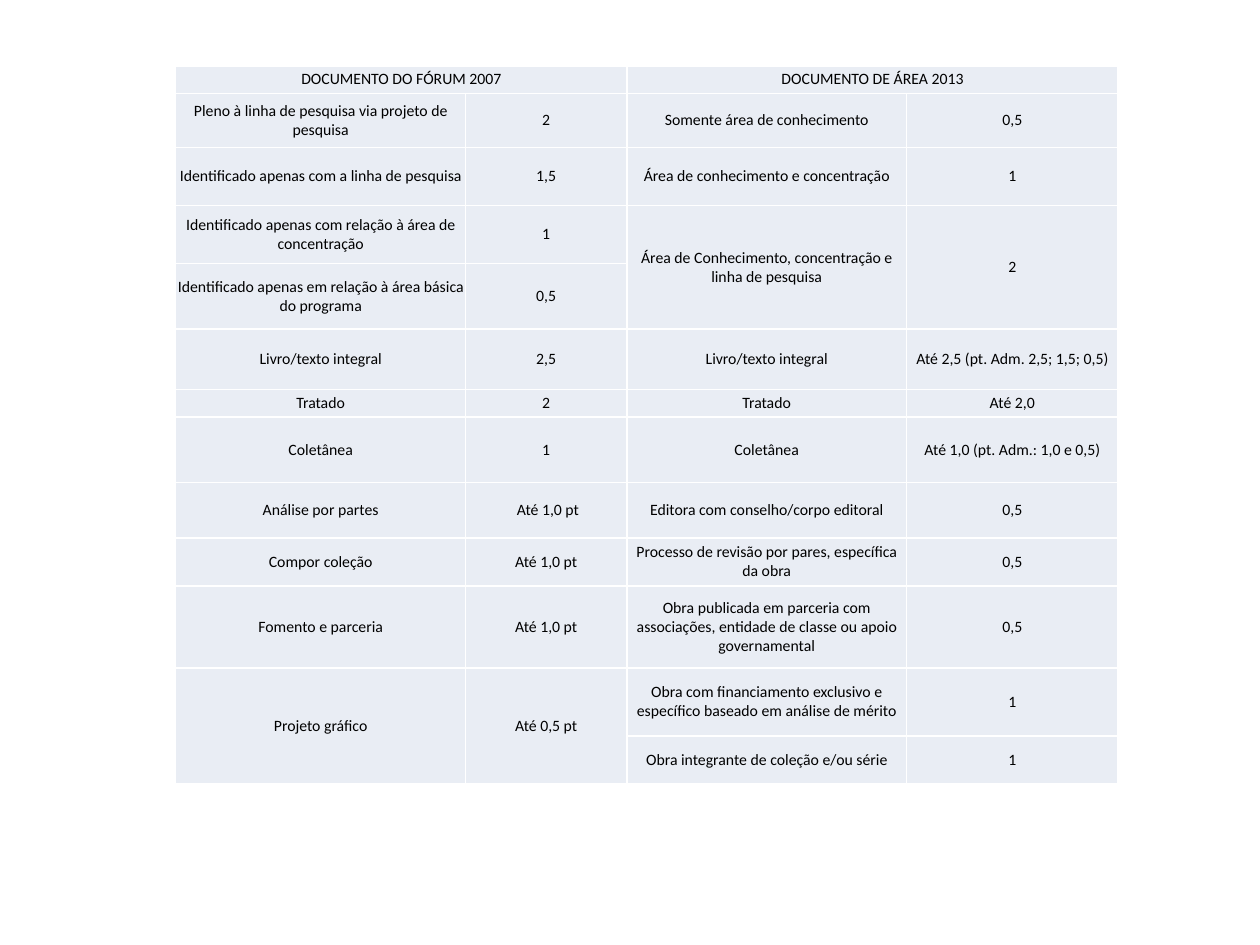
from lxml.etree import SubElement
from pptx import Presentation
from pptx.dml.color import RGBColor
from pptx.enum.text import MSO_ANCHOR, PP_ALIGN
from pptx.oxml.ns import qn
from pptx.util import Pt

COLORS = {"fill": "E9EDF4", "border": "FFFFFF", "text": "000000"}
COLUMN_WIDTHS = [165.6, 92.16, 159.84, 120.96]
ROWS = [
    (15.84, ["DOCUMENTO DO FÓRUM 2007", "", "DOCUMENTO DE ÁREA 2013", ""]),
    (30.96, ["Pleno à linha de pesquisa via projeto de pesquisa", "2",
             "Somente área de conhecimento", "0,5"]),
    (33.12, ["Identificado apenas com a linha de pesquisa", "1,5",
             "Área de conhecimento e concentração", "1"]),
    (33.12, ["Identificado apenas com relação à área de concentração", "1",
             "Área de Conhecimento, concentração e linha de pesquisa", "2"]),
    (37.44, ["Identificado apenas em relação à área básica do programa", "0,5", "", ""]),
    (34.56, ["Livro/texto integral", "2,5",
             "Livro/texto integral", "Até 2,5 (pt. Adm. 2,5; 1,5; 0,5)"]),
    (15.84, ["Tratado", "2", "Tratado", "Até 2,0"]),
    (37.44, ["Coletânea", "1", "Coletânea", "Até 1,0 (pt. Adm.: 1,0 e 0,5)"]),
    (31.68, ["Análise por partes", " Até 1,0 pt",
             "Editora com conselho/corpo editoral", "0,5"]),
    (27.36, ["Compor coleção", "Até 1,0 pt",
             "Processo de revisão por pares, específica da obra", "0,5"]),
    (46.8, ["Fomento e parceria", "Até 1,0 pt",
            "Obra publicada em parceria com associações, entidade de classe "
            "ou apoio governamental", "0,5"]),
    (38.88, ["Projeto gráfico", "Até 0,5 pt",
             "Obra com financiamento exclusivo e específico baseado em análise de mérito", "1"]),
    (27.36, ["", "", "Obra integrante de coleção e/ou série", "1"]),
]
MERGES = [
    ((0, 0), (0, 1)), ((0, 2), (0, 3)),
    ((3, 2), (4, 2)), ((3, 3), (4, 3)),
    ((11, 0), (12, 0)), ((11, 1), (12, 1)),
]
CELL_FORMAT = {
    "margin_left": 0, "margin_right": 0, "margin_top": 0, "margin_bottom": 0,
    "vertical_anchor": MSO_ANCHOR.MIDDLE,
}
FONT_FORMAT = {"name": "Calibri", "size": Pt(9), "bold": False}


def apply_format(target, values):
    for name, value in values.items():
        setattr(target, name, value)


def add_borders(cell):
    properties = cell._tc.get_or_add_tcPr()
    for side in ("a:lnL", "a:lnR", "a:lnT", "a:lnB"):
        line = SubElement(properties, qn(side), w=str(Pt(1)))
        fill = SubElement(line, qn("a:solidFill"))
        SubElement(fill, qn("a:srgbClr"), val=COLORS["border"])


def format_cell(cell, text):
    apply_format(cell, CELL_FORMAT)
    add_borders(cell)
    cell.fill.solid()
    cell.fill.fore_color.rgb = RGBColor.from_string(COLORS["fill"])
    paragraph = cell.text_frame.paragraphs[0]
    paragraph.alignment = PP_ALIGN.CENTER
    apply_format(paragraph.font, FONT_FORMAT)
    if text:
        run = paragraph.add_run()
        run.text = text
        apply_format(run.font, FONT_FORMAT)
        run.font.color.rgb = RGBColor.from_string(COLORS["text"])


def main():
    presentation = Presentation()
    apply_format(presentation, {"slide_width": Pt(720), "slide_height": Pt(540)})
    slide = presentation.slides.add_slide(presentation.slide_layouts[6])
    table = slide.shapes.add_table(
        len(ROWS), len(COLUMN_WIDTHS), Pt(100.4), Pt(37.6),
        Pt(sum(COLUMN_WIDTHS)), Pt(sum(height for height, texts in ROWS))).table
    apply_format(table, {"first_row": False, "horz_banding": False})
    for column, width in zip(table.columns, COLUMN_WIDTHS):
        column.width = Pt(width)
    for row, (height, texts) in zip(table.rows, ROWS):
        row.height = Pt(height)
        for cell, text in zip(row.cells, texts):
            format_cell(cell, text)
    for first, last in MERGES:
        table.cell(*first).merge(table.cell(*last))
    presentation.save("out.pptx")


if __name__ == "__main__":
    main()
